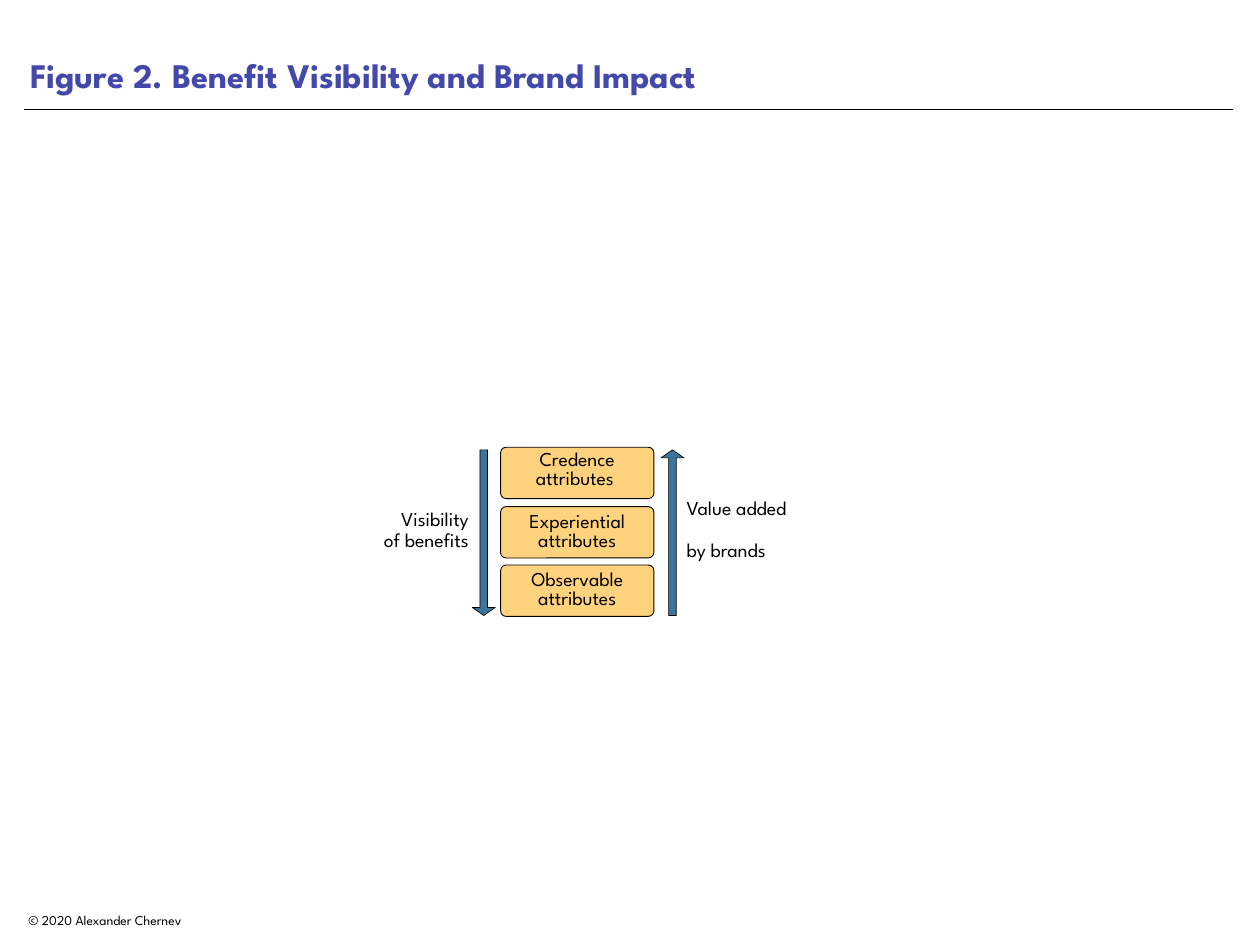
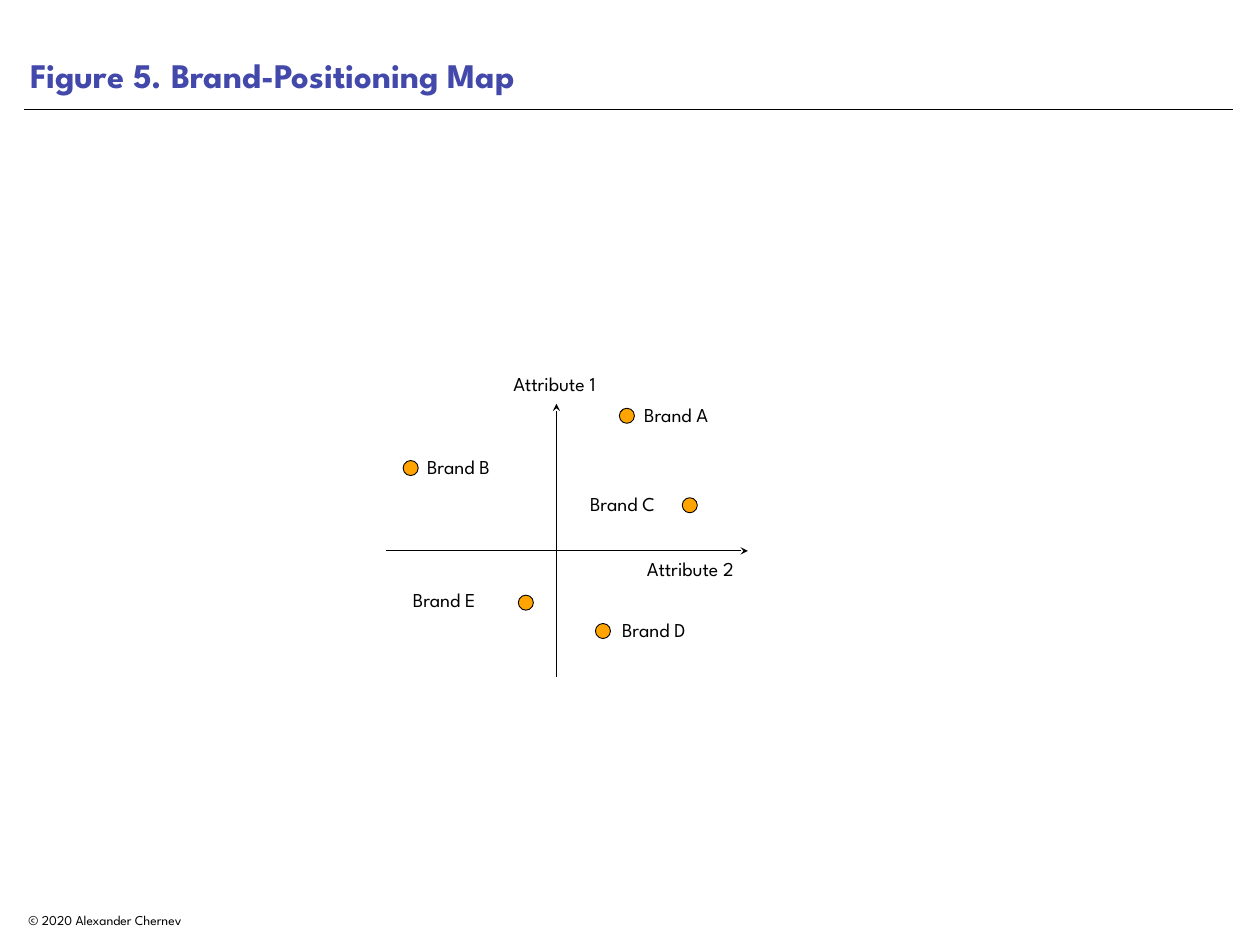
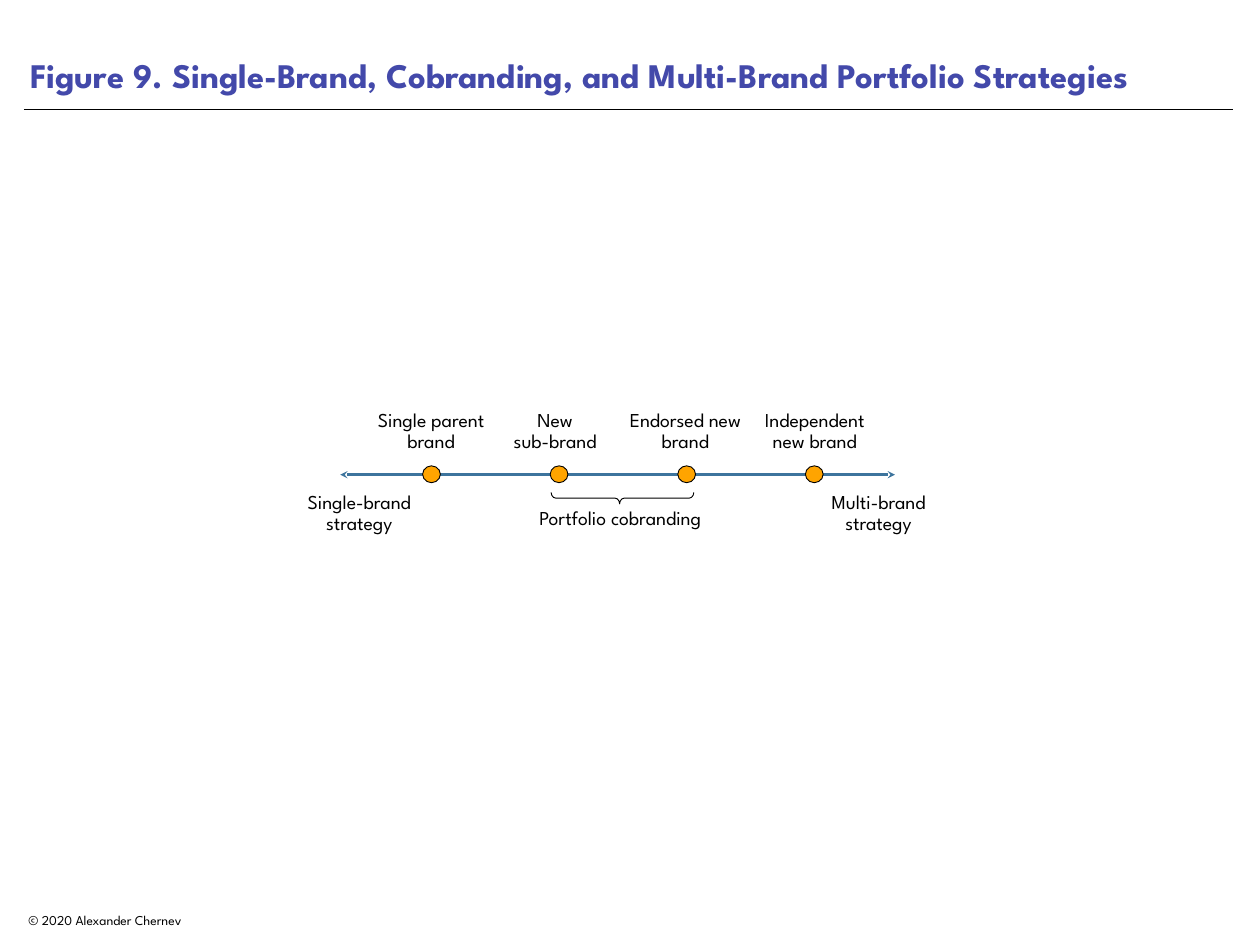
from lxml import etree
from pptx import Presentation
from pptx.dml.color import RGBColor
from pptx.enum.shapes import MSO_CONNECTOR, MSO_SHAPE
from pptx.enum.text import MSO_ANCHOR, PP_ALIGN
from pptx.oxml.ns import qn
from pptx.util import Emu, Pt

PX = 9144  # 100 px to the inch
SLIDE_W, SLIDE_H = 1422, 1067

FONT = "League Spartan"
BLACK, TITLE_BLUE, STEEL = "000000", "4349AA", "3D749D"
SAND, ORANGE = "FFD37D", "FFA400"

STRAIGHT = MSO_CONNECTOR.STRAIGHT
ROUNDED, OVAL = MSO_SHAPE.ROUNDED_RECTANGLE, MSO_SHAPE.OVAL
UP, DOWN, BRACE = MSO_SHAPE.UP_ARROW, MSO_SHAPE.DOWN_ARROW, MSO_SHAPE.RIGHT_BRACE
TOP, MIDDLE, BOTTOM = MSO_ANCHOR.TOP, MSO_ANCHOR.MIDDLE, MSO_ANCHOR.BOTTOM
LEFT, CENTER, RIGHT = PP_ALIGN.LEFT, PP_ALIGN.CENTER, PP_ALIGN.RIGHT


def px(*lengths):
    return [Emu(length * PX) for length in lengths]


def rgb(hex_colour):
    return RGBColor.from_string(hex_colour)


def set_all(target, formats):
    for name, value in formats.items():
        setattr(target, name, value)


def write(frame, text, size=16, colour=BLACK, bold=False, align=LEFT,
          anchor=TOP, inset=0, spacing=1.0, gap=0):
    """Fill a text frame, one paragraph for each line of the text."""
    margin, = px(inset)
    set_all(frame, {"word_wrap": True, "vertical_anchor": anchor,
                    "margin_left": margin, "margin_right": margin,
                    "margin_top": margin, "margin_bottom": margin})
    frame.text = text
    for index, paragraph in enumerate(frame.paragraphs):
        set_all(paragraph, {"alignment": align, "line_spacing": spacing,
                            "space_before": Pt(gap if index else 0)})
        for run in paragraph.runs:
            set_all(run.font, {"name": FONT, "size": Pt(size), "bold": bold})
            run.font.color.rgb = rgb(colour)


def add_label(slide, box, text, **formats):
    write(slide.shapes.add_textbox(*px(*box)).text_frame, text, **formats)


def add_figure(slide, preset, box, fill=None, weight=0.75, adjust=()):
    figure = slide.shapes.add_shape(preset, *px(*box))
    figure.shadow.inherit = False
    if fill:
        figure.fill.solid()
        figure.fill.fore_color.rgb = rgb(fill)
    else:
        figure.fill.background()
    figure.line.color.rgb = rgb(BLACK)
    figure.line.width = Pt(weight)
    for index, value in enumerate(adjust):
        figure.adjustments[index] = value
    return figure


def add_line(slide, ends, colour=BLACK, weight=1, arrowheads=()):
    """Draw a line; arrowheads names its pointed ends, headEnd before tailEnd."""
    connector = slide.shapes.add_connector(STRAIGHT, *px(*ends))
    connector.line.color.rgb = rgb(colour)
    connector.line.width = Pt(weight)
    properties = connector.line._get_or_add_ln()
    for end in arrowheads:
        etree.SubElement(properties, qn("a:" + end), type="stealth")
    etree.SubElement(connector._element.spPr, qn("a:effectLst"))


def new_slide(deck, title):
    """Start a slide with the shared rule, title and footer."""
    slide = deck.slides.add_slide(deck.slide_layouts[6])
    add_line(slide, (27, 124, 1392, 124), weight=0.5)
    add_label(slide, (27, 0, 1364, 115), title, size=28, colour=TITLE_BLUE,
              bold=True, anchor=BOTTOM, inset=7)
    add_label(slide, (25, 1023, 347, 32), "© 2020 Alexander Chernev",
              size=11, anchor=BOTTOM, inset=7)
    return slide


def build_visibility(deck):
    slide = new_slide(deck, "Figure 2. Benefit Visibility and Brand Impact")

    # Stack of attribute boxes
    attributes = [("Credence attributes ", TOP, 3),
                  ("Experiential attributes", MIDDLE, 6),
                  ("Observable attributes", MIDDLE, 6)]
    for row, (text, anchor, inset) in enumerate(attributes):
        box = add_figure(slide, ROUNDED, (565, 505 + 67 * row - row // 2, 173, 58),
                         SAND, adjust=[0.106])
        write(box.text_frame, text, align=CENTER, anchor=anchor, inset=inset,
              spacing=0.8)

    # Arrows on both sides
    for preset, left in ((DOWN, 533), (UP, 746)):
        add_figure(slide, preset, (left, 508, 26, 187), STEEL, weight=0.5,
                   adjust=[0.329, 0.347])
    add_label(slide, (383, 557, 146, 84), "Visibility\nof benefits",
              align=RIGHT, anchor=MIDDLE, spacing=0.9)
    add_label(slide, (775, 557, 130, 84), "Value added\nby brands",
              anchor=MIDDLE, spacing=0.9, gap=17)


def build_positioning_map(deck):
    slide = new_slide(deck, "Figure 5. Brand-Positioning Map")

    # Axes
    add_line(slide, (628, 764, 628, 456), arrowheads=["tailEnd"])
    add_line(slide, (436, 622, 844, 622), arrowheads=["tailEnd"])
    add_label(slide, (566, 420, 125, 28), "Attribute 1 ", align=CENTER)
    add_label(slide, (730, 629, 125, 28), "Attribute 2")

    # Brands: dot position, then label position
    brands = {"Brand A": (699, 461, 727, 455),
              "Brand B": (455, 520, 482, 514),
              "Brand C": (770, 562, 666, 555),
              "Brand D": (672, 704, 702, 698),
              "Brand E": (585, 672, 466, 664)}
    for brand, (dot_x, dot_y, label_x, label_y) in brands.items():
        add_figure(slide, OVAL, (dot_x, dot_y, 17, 17), ORANGE)
        add_label(slide, (label_x, label_y, 125, 28), brand)


def build_portfolio(deck):
    slide = new_slide(deck, "Figure 9. Single-Brand, Cobranding, and "
                            "Multi-Brand Portfolio Strategies")
    centred = {"align": CENTER, "anchor": MIDDLE, "spacing": 0.9}

    # Scale with its four strategies
    add_line(slide, (384, 536, 1010, 536), STEEL, 2, ["headEnd", "tailEnd"])
    strategies = [("Single parent\nbrand", 414), ("New\nsub-brand", 554),
                  ("Endorsed new\nbrand", 701), ("Independent\nnew brand", 847)]
    for column, (strategy, left) in enumerate(strategies):
        add_figure(slide, OVAL, (477 + 144 * column, 526, 20, 19), ORANGE)
        add_label(slide, (left, 457, 145, 61), strategy, **centred)

    # Ends of the scale
    for text, left in (("Single-brand\nstrategy", 333),
                       ("Multi-brand\nstrategy", 919)):
        add_label(slide, (left, 549, 145, 61), text, **centred)

    # Cobranding range
    brace = add_figure(slide, BRACE, (696, 482, 13, 161), adjust=[0.4, 0.52])
    brace.rotation = 90
    add_label(slide, (589, 570, 222, 35), "Portfolio cobranding",
              align=CENTER, anchor=MIDDLE, spacing=0.8)


def main():
    deck = Presentation()
    deck.slide_width, deck.slide_height = px(SLIDE_W, SLIDE_H)
    build_visibility(deck)
    build_positioning_map(deck)
    build_portfolio(deck)
    deck.save("out.pptx")


if __name__ == "__main__":
    main()
